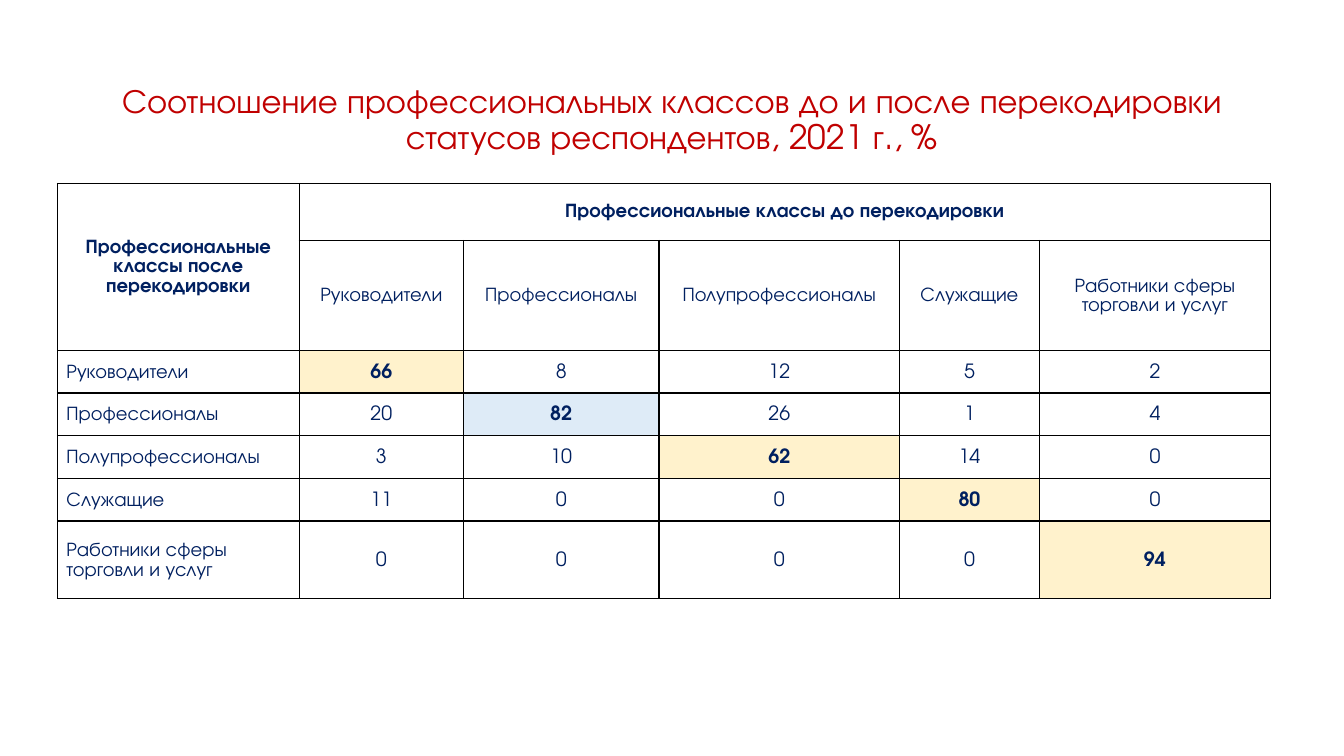
from lxml import etree
from pptx import Presentation
from pptx.dml.color import RGBColor
from pptx.enum.text import MSO_ANCHOR, PP_ALIGN
from pptx.oxml.ns import qn
from pptx.util import Pt

MID = MSO_ANCHOR.MIDDLE
LEFT, CENTER = PP_ALIGN.LEFT, PP_ALIGN.CENTER
FONT = "TeX Gyre Adventor"
HEX = {"red": "C00000", "navy": "002060", "black": "000000",
       "cream": "FFF2CC", "blue": "DEEBF7"}


def style(par, size, color, bold=False, align=CENTER):
    par.alignment = align
    par.font.name = FONT
    par.font.size = Pt(size)
    par.font.bold = bold
    par.font.color.rgb = RGBColor.from_string(HEX[color])


def border(cell):
    props = cell._tc.get_or_add_tcPr()
    for i, side in enumerate(("lnL", "lnR", "lnT", "lnB")):
        line = etree.Element(qn("a:" + side), w=str(Pt(1)))
        fill = etree.SubElement(line, qn("a:solidFill"))
        etree.SubElement(fill, qn("a:srgbClr"), val=HEX["black"])
        props.insert(i, line)


prs = Presentation()
prs.slide_width, prs.slide_height = Pt(960), Pt(540)
slide = prs.slides.add_slide(prs.slide_layouts[5])

# Title
title = slide.shapes.title
title.left, title.top, title.width, title.height = Pt(66), Pt(55.5), Pt(828), Pt(61)
frame = title.text_frame
frame.text = ("Соотношение профессиональных классов до и после "
              "перекодировки статусов респондентов, 2021 г., %")
frame.vertical_anchor = MID
frame.word_wrap = True
style(frame.paragraphs[0], 24, "red")
frame.paragraphs[0].line_spacing = 0.9

# Table content
groups = ["Руководители", "Профессионалы", "Полупрофессионалы", "Служащие",
          "Работники сферы торговли и услуг"]
shares = [[66, 8, 12, 5, 2],
          [20, 82, 26, 1, 4],
          [3, 10, 62, 14, 0],
          [11, 0, 0, 80, 0],
          [0, 0, 0, 0, 94]]
rows = [["Профессиональные классы после перекодировки",
         "Профессиональные классы до перекодировки", "", "", "", ""],
        ["", *groups]]
rows += [[name, *vals] for name, vals in zip(groups, shares)]

# Table grid
widths = [172.8, 117.2, 139.8, 171.8, 100, 165]
heights = [40.8, 78.5, 30.5, 30.5, 30.5, 30.5, 55.5]
table = slide.shapes.add_table(len(rows), len(widths), Pt(41), Pt(131),
                               Pt(sum(widths)), Pt(sum(heights))).table
table.first_row = table.horz_banding = False
for col, width in zip(table.columns, widths):
    col.width = Pt(width)
for row, height in zip(table.rows, heights):
    row.height = Pt(height)
table.cell(0, 0).merge(table.cell(1, 0))
table.cell(0, 1).merge(table.cell(0, 5))

# Cells: the diagonal holds the unchanged shares
for r, row in enumerate(rows):
    for c, text in enumerate(row):
        cell = table.cell(r, c)
        same = r > 1 and c == r - 1
        if same:
            cell.fill.solid()
            tint = HEX["blue" if c == 2 else "cream"]
            cell.fill.fore_color.rgb = RGBColor.from_string(tint)
        else:
            cell.fill.background()
        border(cell)
        cell.vertical_anchor = MID
        side, top, foot = (8.6, 4.3, 4.3) if r == 0 else (6.5, 0.7, 0)
        cell.margin_left = cell.margin_right = Pt(side)
        cell.margin_top, cell.margin_bottom = Pt(top), Pt(foot)
        if cell.is_spanned:
            continue
        cell.text = str(text)
        par = cell.text_frame.paragraphs[0]
        style(par, 14, "navy", same or r == 0, LEFT if c == 0 and r > 1 else CENTER)
        par.line_spacing = 1.07
        par.space_after = Pt(8)

prs.save("out.pptx")
